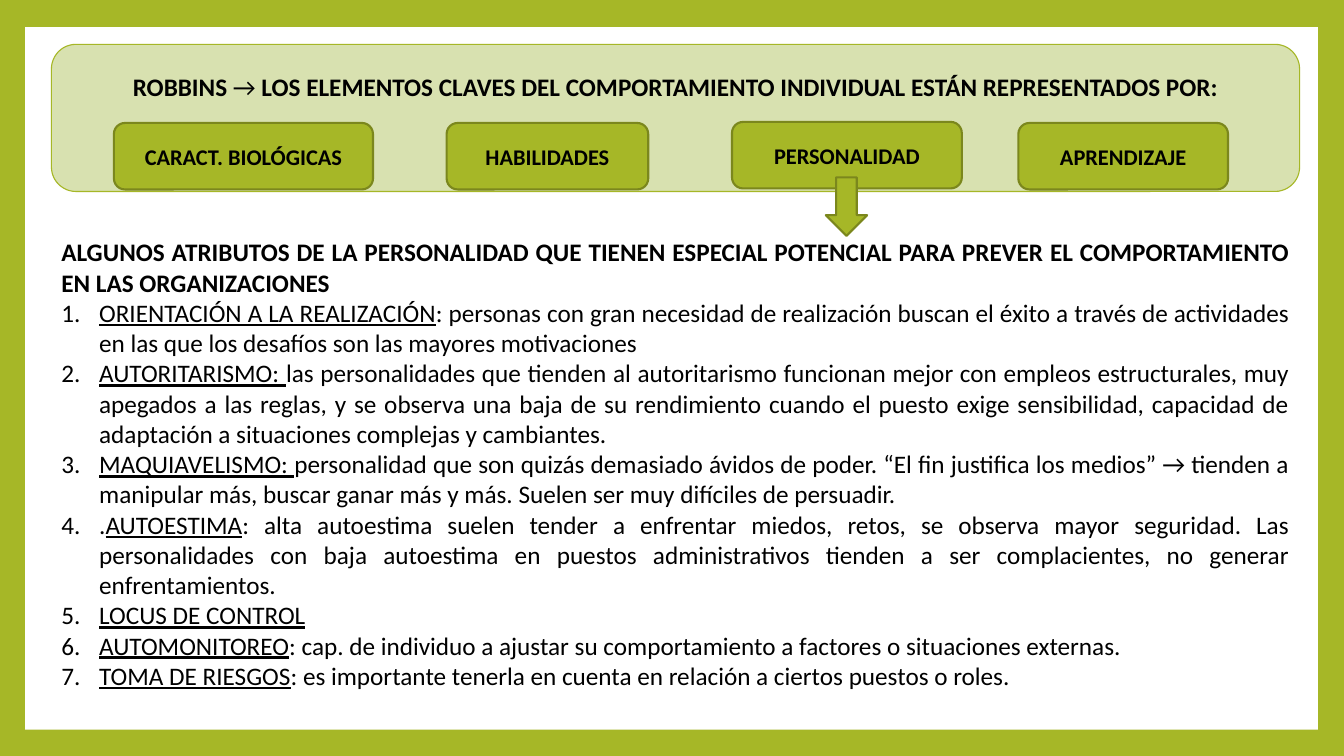
"""Build a slide on the key elements of individual behaviour and personality."""
from dataclasses import dataclass

from lxml import etree
from pptx import Presentation
from pptx.dml.color import RGBColor
from pptx.enum.shapes import MSO_SHAPE
from pptx.enum.text import MSO_ANCHOR, PP_ALIGN
from pptx.oxml.ns import qn
from pptx.util import Inches, Pt

RECTANGLE = MSO_SHAPE.RECTANGLE
ROUNDED = MSO_SHAPE.ROUNDED_RECTANGLE
DOWN_ARROW = MSO_SHAPE.DOWN_ARROW
MIDDLE = MSO_ANCHOR.MIDDLE
TOP = MSO_ANCHOR.TOP
CENTER = PP_ALIGN.CENTER
JUSTIFY = PP_ALIGN.JUSTIFY

FONT = "Calibri"
GREEN, DARK_GREEN, PALE_GREEN = "A6B727", "7B871D", "D8E1B0"
WHITE, BLACK = "FFFFFF", "000000"
HEADING_SIZE, BUTTON_SIZE = 18, 16
BUTTON_HEIGHT = 0.66
NUMBER_INDENT = 0.375


@dataclass(frozen=True)
class Box:
    left: float
    top: float
    width: float
    height: float


@dataclass(frozen=True)
class Button:
    label: str
    left: float
    top: float
    width: float


@dataclass(frozen=True)
class Attribute:
    name: str
    description: str = ""
    prefix: str = ""


BUTTONS = [
    Button("CARACT. BIOLÓGICAS", 1.13, 1.22, 2.57),
    Button("HABILIDADES", 4.43, 1.22, 2),
    Button("PERSONALIDAD", 7.26, 1.21, 2.28),
    Button("APRENDIZAJE", 10.1, 1.22, 2.08),
]

ATTRIBUTES_TITLE = (
    "ALGUNOS ATRIBUTOS DE LA PERSONALIDAD QUE TIENEN ESPECIAL POTENCIAL "
    "PARA PREVER EL COMPORTAMIENTO EN LAS ORGANIZACIONES"
)
ATTRIBUTES = [
    Attribute(
        "ORIENTACIÓN A LA REALIZACIÓN",
        ": personas con gran necesidad de realización buscan el éxito a través de "
        "actividades en las que los desafíos son las mayores motivaciones",
    ),
    Attribute(
        "AUTORITARISMO: ",
        "las personalidades que tienden al autoritarismo funcionan mejor con empleos "
        "estructurales, muy apegados a las reglas, y se observa una baja de su "
        "rendimiento cuando el puesto exige sensibilidad, capacidad de adaptación a "
        "situaciones complejas y cambiantes.",
    ),
    Attribute(
        "MAQUIAVELISMO: ",
        "personalidad que son quizás demasiado ávidos de poder. “El fin justifica los "
        "medios” → tienden a manipular más, buscar ganar más y más. Suelen ser muy "
        "difíciles de persuadir.",
    ),
    Attribute(
        "AUTOESTIMA",
        ": alta autoestima suelen tender a enfrentar miedos, retos, se observa mayor "
        "seguridad. Las personalidades con baja autoestima en puestos administrativos "
        "tienden a ser complacientes, no generar enfrentamientos.",
        prefix=".",
    ),
    Attribute("LOCUS DE CONTROL"),
    Attribute(
        "AUTOMONITOREO",
        ": cap. de individuo a ajustar su comportamiento a factores o situaciones externas.",
    ),
    Attribute(
        "TOMA DE RIESGOS",
        ": es importante tenerla en cuenta en relación a ciertos puestos o roles.",
    ),
]


def color(value: str) -> RGBColor:
    return RGBColor.from_string(value)


def add_shape(slide, kind, box: Box, fill: str, line: str = "", line_width: float = 1.5):
    shape = slide.shapes.add_shape(
        kind, Inches(box.left), Inches(box.top), Inches(box.width), Inches(box.height)
    )
    shape.shadow.inherit = False
    shape.fill.solid()
    shape.fill.fore_color.rgb = color(fill)
    if line:
        shape.line.color.rgb = color(line)
        shape.line.width = Pt(line_width)
    else:
        shape.line.fill.background()
    return shape


def add_run(paragraph, text: str, size: int, bold: bool = False, underline: bool = False) -> None:
    run = paragraph.add_run()
    run.text = text
    run.font.name = FONT
    run.font.size = Pt(size)
    run.font.bold = bold
    run.font.underline = underline
    run.font.color.rgb = color(BLACK)


def number_paragraph(paragraph) -> None:
    properties = paragraph._p.get_or_add_pPr()
    properties.set("marL", str(Inches(NUMBER_INDENT)))
    properties.set("indent", str(-Inches(NUMBER_INDENT)))
    bullet_font = etree.SubElement(properties, qn("a:buFont"))
    bullet_font.set("typeface", "+mj-lt")
    numbering = etree.SubElement(properties, qn("a:buAutoNum"))
    numbering.set("type", "arabicPeriod")


def add_heading_panel(slide) -> None:
    panel = add_shape(slide, ROUNDED, Box(0.51, 0.44, 12.38, 1.46), PALE_GREEN, GREEN, 0.79)
    frame = panel.text_frame
    frame.word_wrap = True
    frame.vertical_anchor = TOP
    frame.margin_top = Inches(0.2)
    paragraph = frame.paragraphs[0]
    paragraph.alignment = CENTER
    add_run(paragraph, "ROBBINS ", HEADING_SIZE, bold=True)
    add_run(paragraph, "→ ", HEADING_SIZE)
    add_run(
        paragraph,
        "LOS ELEMENTOS CLAVES DEL COMPORTAMIENTO INDIVIDUAL ESTÁN REPRESENTADOS POR:",
        HEADING_SIZE,
        bold=True,
    )


def add_button(slide, button: Button) -> None:
    box = Box(button.left, button.top, button.width, BUTTON_HEIGHT)
    shape = add_shape(slide, ROUNDED, box, GREEN, DARK_GREEN)
    frame = shape.text_frame
    frame.word_wrap = True
    frame.vertical_anchor = MIDDLE
    paragraph = frame.paragraphs[0]
    paragraph.alignment = CENTER
    add_run(paragraph, button.label, BUTTON_SIZE, bold=True)


def add_attribute_list(slide) -> None:
    textbox = slide.shapes.add_textbox(Inches(0.51), Inches(2.3), Inches(12.38), Inches(4.64))
    frame = textbox.text_frame
    frame.word_wrap = True
    title = frame.paragraphs[0]
    title.alignment = JUSTIFY
    add_run(title, ATTRIBUTES_TITLE, HEADING_SIZE, bold=True)
    for attribute in ATTRIBUTES:
        paragraph = frame.add_paragraph()
        paragraph.alignment = JUSTIFY
        number_paragraph(paragraph)
        if attribute.prefix:
            add_run(paragraph, attribute.prefix, HEADING_SIZE)
        add_run(paragraph, attribute.name, HEADING_SIZE, underline=True)
        if attribute.description:
            add_run(paragraph, attribute.description, HEADING_SIZE)


def main() -> None:
    presentation = Presentation()
    presentation.slide_width = Inches(13.33)
    presentation.slide_height = Inches(7.5)
    slide = presentation.slides.add_slide(presentation.slide_layouts[6])
    slide.background.fill.solid()
    slide.background.fill.fore_color.rgb = color(GREEN)
    add_shape(slide, RECTANGLE, Box(0.25, 0.27, 12.82, 6.97), WHITE)
    add_heading_panel(slide)
    for button in BUTTONS:
        add_button(slide, button)
    add_shape(slide, DOWN_ARROW, Box(8.19, 1.76, 0.41, 0.58), GREEN, DARK_GREEN)
    add_attribute_list(slide)
    presentation.save("out.pptx")


if __name__ == "__main__":
    main()
